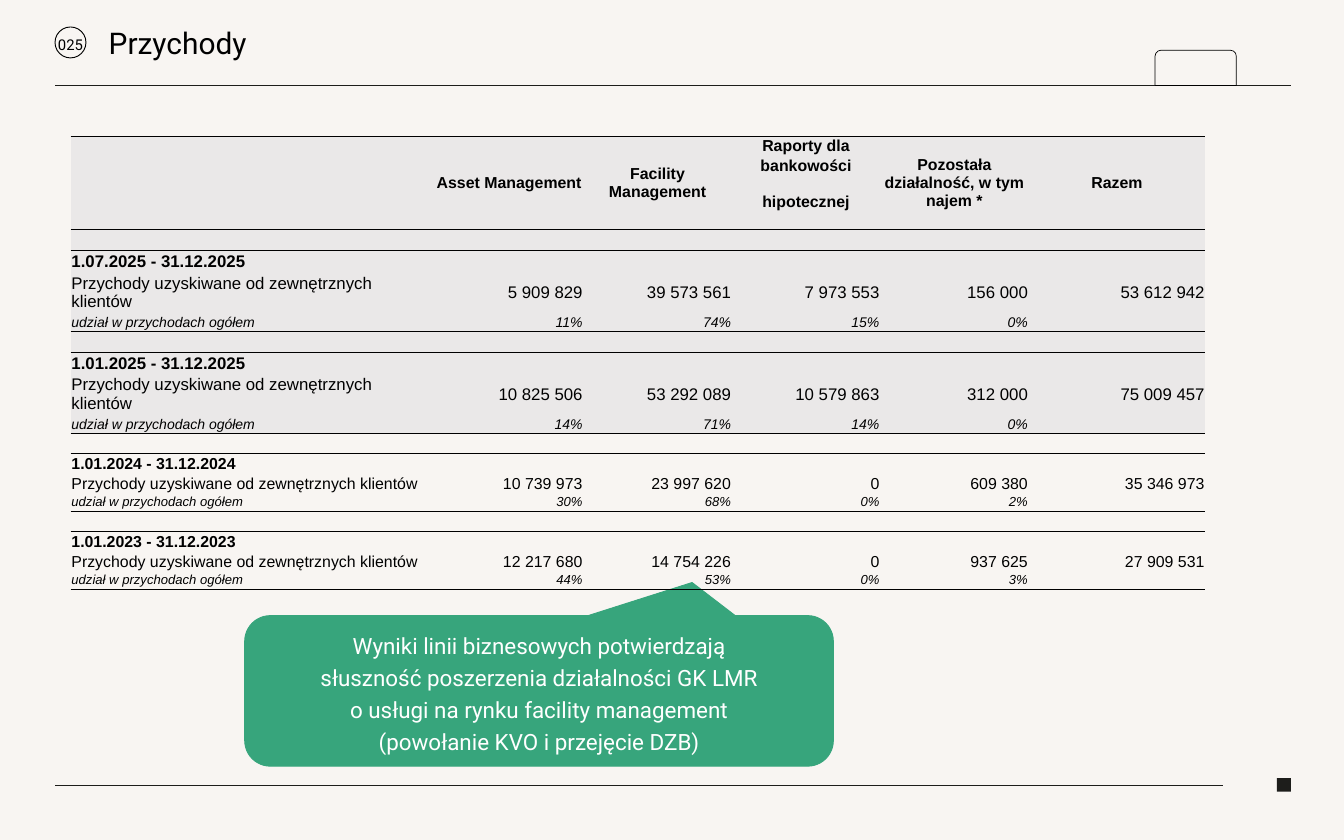
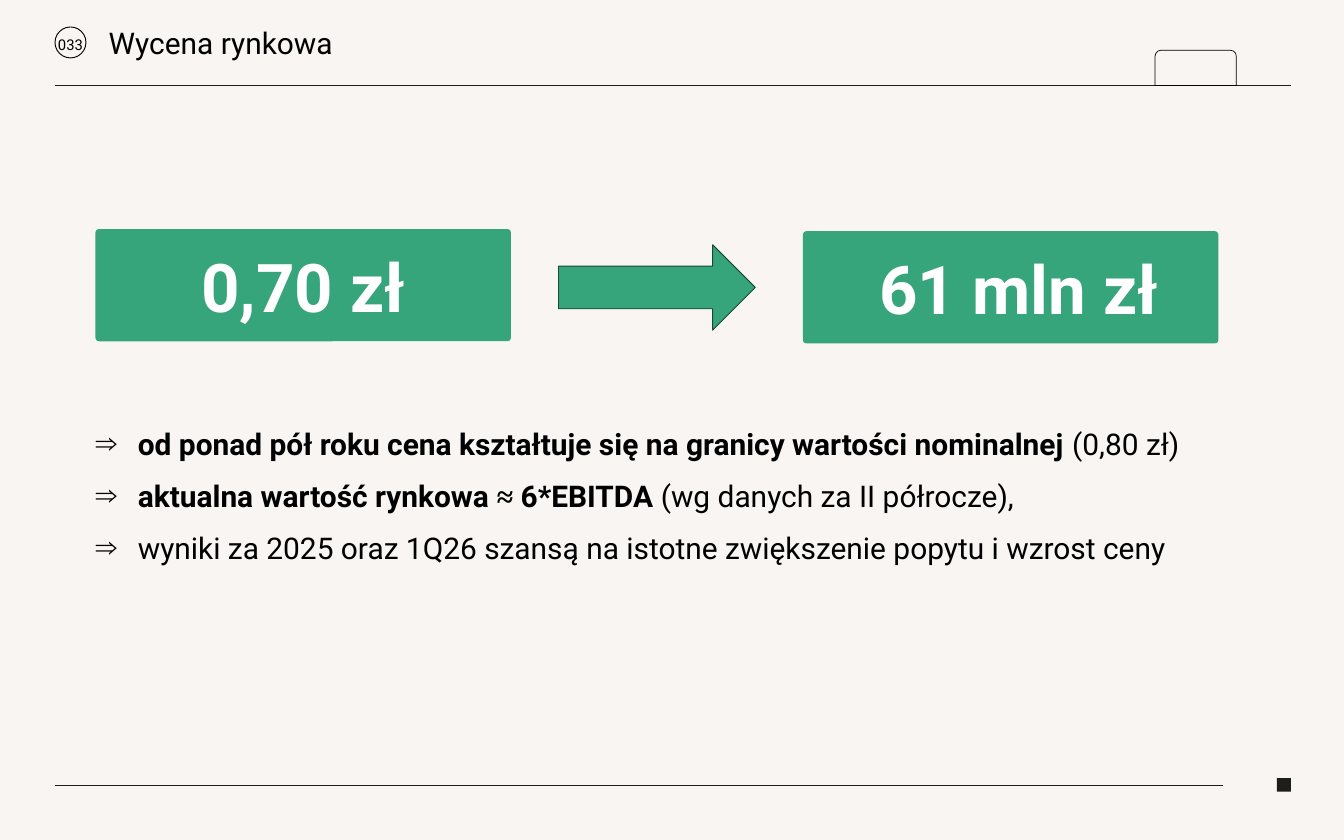
from dataclasses import dataclass

import lxml.etree
import pptx
import pptx.dml.color
import pptx.enum.dml
import pptx.enum.shapes
import pptx.enum.text
import pptx.oxml.ns
import pptx.util

Cm, Pt = pptx.util.Cm, pptx.util.Pt
SHAPE = pptx.enum.shapes.MSO_SHAPE
ALIGN = pptx.enum.text.PP_ALIGN
ANCHOR = pptx.enum.text.MSO_ANCHOR
qn = pptx.oxml.ns.qn


@dataclass(frozen=True)
class Theme:
    paper: str = "F8F5F2"
    black: str = "000000"
    rule: str = "1D1D1B"
    white: str = "FFFFFF"
    green: str = "37A57C"
    dark_green: str = "184836"
    shaded: str = "EAE8E8"
    font: str = "Roboto"
    table_font: str = "Arial"
    symbol_font: str = "Times New Roman"
    page: float = 15.9
    title: float = 32
    body: float = 32
    callout: float = 24
    figure: float = 72
    head: float = 17


THEME = Theme()
NO_STYLE_NO_GRID = "{2D5ABB26-0587-4C30-8999-92F81FD0307C}"
NO_INSETS = dict(margin_left=0, margin_top=0, margin_right=0, margin_bottom=0)

# Content; positions are left, top, width, height in centimetres.
REVENUE = {"page": "025", "title": "Przychody"}
VALUATION = {"page": "033", "title": "Wycena rynkowa"}

LINE_LABEL = "Przychody uzyskiwane od zewnętrznych klientów"
SHARE_LABEL = "udział w przychodach ogółem"
SEGMENTS = [
    "Asset Management",
    "Facility Management",
    ("Raporty dla", "bankowości", "hipotecznej"),
    "Pozostała działalność, w tym najem *",
    "Razem",
]
PERIODS = [
    ("1.07.2025 - 31.12.2025",
     ["5 909 829", "39 573 561", "7 973 553", "156 000", "53 612 942"],
     ["11%", "74%", "15%", "0%"]),
    ("1.01.2025 - 31.12.2025",
     ["10 825 506", "53 292 089", "10 579 863", "312 000", "75 009 457"],
     ["14%", "71%", "14%", "0%"]),
    ("1.01.2024 - 31.12.2024",
     ["10 739 973", "23 997 620", "0", "609 380", "35 346 973"],
     ["30%", "68%", "0%", "2%"]),
    ("1.01.2023 - 31.12.2023",
     ["12 217 680", "14 754 226", "0", "937 625", "27 909 531"],
     ["44%", "53%", "0%", "3%"]),
]
TABLE_LEFT, TABLE_TOP = 2.67, 5.13
COLUMN_WIDTHS = [13.77] + [5.61] * 4 + [6.68]
HEAD_ROWS = [0.74] * 3
CURRENT_YEAR = dict(rows=[0.79, 0.79, 1.55, 0.69], size=18, share=15, fill=THEME.shaded)
PAST_YEAR = dict(rows=[0.74, 0.74, 0.74, 0.68], size=17, share=14, fill=None)
PERIOD_LOOKS = [CURRENT_YEAR, CURRENT_YEAR, PAST_YEAR, PAST_YEAR]

CONCLUSION = [
    "Wyniki linii biznesowych potwierdzają\vsłuszność poszerzenia działalności GK LMR"
    "\vo usługi na rynku facility management",
    "(powołanie KVO i przejęcie DZB)",
]
CONCLUSION_BOX = (9.25, 23.27, 22.25, 5.69)

FIGURES = [  # text, box, left inset
    ("0,70 zł", (3.61, 8.66, 15.7, 4.24), 0.25),
    ("61 mln zł", (30.35, 8.74, 15.7, 4.24), 0.85),
]
ARROW_BOX = (21.11, 9.25, 7.44, 3.23)
BOLD, PLAIN, SYMBOL = {"bold": True}, {}, {"bold": True, "name": THEME.symbol_font}
REMARKS = [
    [("od ponad pół roku cena kształtuje się na granicy wartości nominalnej", BOLD),
     (" (0,80 zł)", PLAIN)],
    [("aktualna wartość rynkowa ", BOLD), ("≈", SYMBOL), (" 6*EBITDA", BOLD),
     (" (wg danych za II półrocze),", PLAIN)],
    [("wyniki za 2025 oraz 1Q26 szansą na istotne zwiększenie popytu i wzrost ceny", PLAIN)],
]
REMARKS_BOX = (3.61, 15.88, 41.83, 5.44)


def rgb(value):
    return pptx.dml.color.RGBColor.from_string(value)


def assign(target, **values):
    for name, value in values.items():
        setattr(target, name, value)


def style(font, size, color=THEME.black, **values):
    assign(font, **{"name": THEME.font, "bold": False, "size": Pt(size), **values})
    font.color.rgb = rgb(color)


def place(part, box):
    assign(part, **dict(zip(("left", "top", "width", "height"), map(Cm, box))))


def add_preset(slide, preset, box, fill=None, line=None, width=1):
    part = slide.shapes.add_shape(preset, *map(Cm, box))
    part.shadow.inherit = False
    if fill:
        part.fill.solid()
        part.fill.fore_color.rgb = rgb(fill)
    else:
        part.fill.background()
    if line:
        part.line.color.rgb = rgb(line)
        part.line.width = Pt(width)
    else:
        part.line.fill.background()
    return part


def write(frame, paragraphs, size, color, spacing=1.0, **values):
    """Fill a frame with centred paragraphs of one style."""
    frame.vertical_anchor = ANCHOR.MIDDLE
    frame.text = "\n".join(paragraphs)
    for paragraph in frame.paragraphs:
        assign(paragraph, alignment=ALIGN.CENTER, line_spacing=spacing)
        for run in paragraph.runs:
            style(run.font, size, color, **values)


def add_rule(slide, left, right, y):
    rule = slide.shapes.add_connector(
        pptx.enum.shapes.MSO_CONNECTOR.STRAIGHT, *map(Cm, (left, y, right, y)))
    rule.line.color.rgb = rgb(THEME.rule)
    rule.line.width = Pt(0.75)
    lxml.etree.SubElement(rule._element.spPr, qn("a:effectLst"))


def add_page(deck, layout, content):
    """Add a slide with its title, page badge, rules and corner marks."""
    slide = deck.slides.add_slide(deck.slide_layouts[layout])
    add_rule(slide, 2.08, 48.79, 3.23)
    add_rule(slide, 2.08, 46.23, 29.67)
    add_preset(slide, SHAPE.ROUND_2_SAME_RECTANGLE, (43.66, 1.9, 3.07, 1.33),
               line=THEME.black, width=0.75)
    add_preset(slide, SHAPE.RECTANGLE, (48.26, 29.41, 0.53, 0.51), fill=THEME.rule)

    badge = add_preset(slide, SHAPE.OVAL, (2.08, 1.02, 1.17, 1.17), line=THEME.black)
    assign(badge.text_frame, **{**NO_INSETS, "margin_top": Cm(0.13), "word_wrap": False})
    write(badge.text_frame, [content["page"]], THEME.page, THEME.black)

    title = slide.shapes.title
    place(title, (4.11, 0.15, 38.23, 3.07))
    frame = title.text_frame
    assign(frame, **NO_INSETS, auto_size=pptx.enum.text.MSO_AUTO_SIZE.NONE)
    write(frame, [content["title"]], THEME.title, THEME.black, spacing=0.9)
    frame.paragraphs[0].alignment = ALIGN.LEFT
    return slide


def add_border(cell, side):
    border = lxml.etree.SubElement(cell._tc.get_or_add_tcPr(), qn(f"a:{side}"), w=str(Pt(0.5)))
    solid = lxml.etree.SubElement(border, qn("a:solidFill"))
    lxml.etree.SubElement(solid, qn("a:srgbClr"), val=THEME.black)


def fill_cell(cell, text, size, align, fill, top=False, bottom=False, **values):
    assign(cell, margin_left=Cm(0.03), margin_right=Cm(0.03), margin_top=Cm(0.03),
           margin_bottom=0, vertical_anchor=ANCHOR.MIDDLE)
    for side, wanted in (("lnT", top), ("lnB", bottom)):
        if wanted:
            add_border(cell, side)
    if fill:
        cell.fill.solid()
        cell.fill.fore_color.rgb = rgb(fill)
    else:
        cell.fill.background()
    paragraph = cell.text_frame.paragraphs[0]
    paragraph.alignment = align
    if text:
        run = paragraph.add_run()
        run.text = text
        style(run.font, size, name=THEME.table_font, **values)
    else:
        lxml.etree.SubElement(paragraph._p, qn("a:endParaRPr"), sz=str(size * 100))


def fill_head(table):
    last = len(HEAD_ROWS) - 1
    for column, segment in enumerate(["", *SEGMENTS]):
        split = isinstance(segment, tuple)
        lines = segment if split else (segment, "", "")
        for row, text in enumerate(lines):
            fill_cell(table.cell(row, column), text, THEME.head, ALIGN.CENTER, THEME.shaded,
                      top=row == 0, bottom=row == last or not split, bold=True)
        if not split:
            table.cell(0, column).merge(table.cell(last, column))


def fill_period(table, first_row, period, look):
    dates, amounts, shares = period
    lines = [
        ([], look["size"], {"top": True}),
        ([dates], look["size"], {"bold": True}),
        ([LINE_LABEL, *amounts], look["size"], {}),
        ([SHARE_LABEL, *shares], look["share"], {"italic": True, "bottom": True}),
    ]
    for row, (texts, size, values) in enumerate(lines, first_row):
        texts = texts + [""] * (len(COLUMN_WIDTHS) - len(texts))
        for column, text in enumerate(texts):
            fill_cell(table.cell(row, column), text, size,
                      ALIGN.RIGHT if column else ALIGN.LEFT, look["fill"], **values)


def add_revenue_table(slide):
    heights = HEAD_ROWS + [height for look in PERIOD_LOOKS for height in look["rows"]]
    box = (TABLE_LEFT, TABLE_TOP, sum(COLUMN_WIDTHS), sum(heights))
    table = slide.shapes.add_table(len(heights), len(COLUMN_WIDTHS), *map(Cm, box)).table
    assign(table, first_row=False, horz_banding=False)
    table._tbl.tblPr.find(qn("a:tableStyleId")).text = NO_STYLE_NO_GRID
    for column, width in zip(table.columns, COLUMN_WIDTHS):
        column.width = Cm(width)
    for row, height in zip(table.rows, heights):
        row.height = Cm(height)
    fill_head(table)
    first_row = len(HEAD_ROWS)
    for period, look in zip(PERIODS, PERIOD_LOOKS):
        fill_period(table, first_row, period, look)
        first_row += len(look["rows"])


def add_remarks(slide):
    body = slide.placeholders[1]
    place(body, REMARKS_BOX)
    frame = body.text_frame
    assign(frame, **NO_INSETS, vertical_anchor=ANCHOR.TOP,
           auto_size=pptx.enum.text.MSO_AUTO_SIZE.NONE)
    for index, remark in enumerate(REMARKS):
        paragraph = frame.add_paragraph() if index else frame.paragraphs[0]
        properties = paragraph._p.get_or_add_pPr()
        properties.set("marL", str(Cm(1.6)))
        properties.set("indent", str(Cm(-1.6)))
        lxml.etree.SubElement(properties, qn("a:buChar"), char="⇒")
        assign(paragraph, alignment=ALIGN.LEFT, line_spacing=1.14,
               space_before=Pt(6 if index else 0), space_after=Pt(6))
        for text, values in remark:
            run = paragraph.add_run()
            run.text = text
            style(run.font, THEME.body, **values)


def build_revenue(deck):
    slide = add_page(deck, 5, REVENUE)
    callout = add_preset(slide, SHAPE.ROUNDED_RECTANGULAR_CALLOUT, CONCLUSION_BOX,
                         fill=THEME.green, line=THEME.green)
    for index, value in enumerate((0.26, -0.72, 0.17)):
        callout.adjustments[index] = value
    write(callout.text_frame, CONCLUSION, THEME.callout, THEME.white, spacing=1.2)
    add_revenue_table(slide)


def build_valuation(deck):
    slide = add_page(deck, 1, VALUATION)
    add_remarks(slide)
    add_preset(slide, SHAPE.RIGHT_ARROW, ARROW_BOX, fill=THEME.green, line=THEME.dark_green)
    for text, box, inset in FIGURES:
        figure = add_preset(slide, SHAPE.ROUNDED_RECTANGLE, box, fill=THEME.green)
        figure.adjustments[0] = 0.03
        figure.text_frame.margin_left = Cm(inset)
        write(figure.text_frame, [text], THEME.figure, THEME.white, bold=True)


def main():
    deck = pptx.Presentation()
    assign(deck, slide_width=Cm(50.8), slide_height=Cm(31.75))
    background = deck.slide_master.background.fill
    background.solid()
    background.fore_color.rgb = rgb(THEME.paper)
    build_revenue(deck)
    build_valuation(deck)
    deck.save("out.pptx")


if __name__ == "__main__":
    main()
